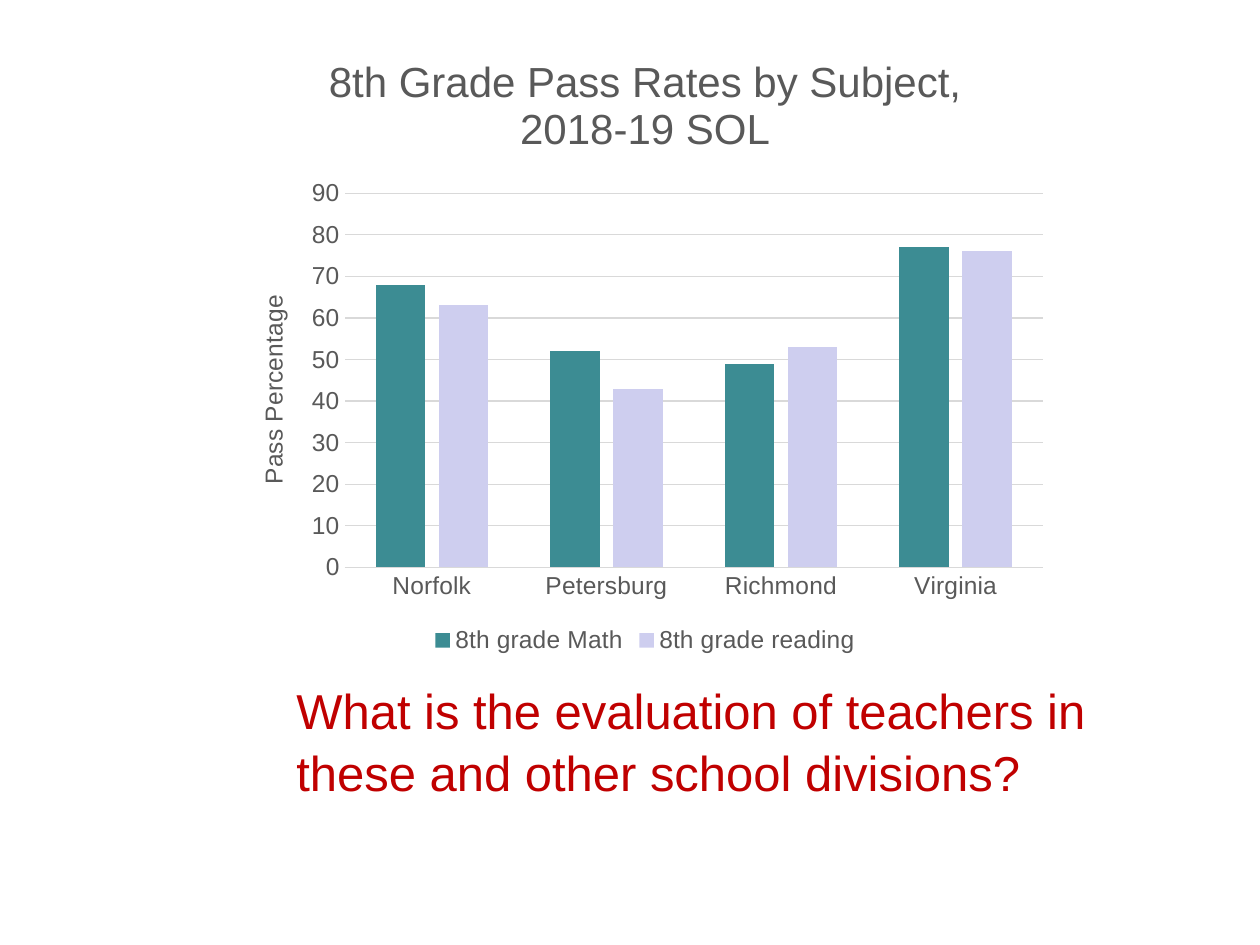
from dataclasses import dataclass

from pptx import Presentation
from pptx.chart.data import CategoryChartData as Data
from pptx.dml.color import RGBColor as Rgb
from pptx.enum.chart import XL_CHART_TYPE as Kind, XL_LEGEND_POSITION as Spot, XL_TICK_MARK as Tick
from pptx.enum.text import MSO_ANCHOR as Anchor, MSO_AUTO_SIZE as Fit, PP_ALIGN as Align
from pptx.util import Cm, Pt


@dataclass(frozen=True)
class Theme:
    face: str = "Arial"
    ink: str = "595959"
    rule: str = "D9D9D9"
    alert: str = "C00000"
    bars: tuple = ("3C8C93", "CECEEF")
    label: int = 14
    head: int = 24
    ask: int = 28


class Deck:
    """Hold the theme and the current slide, and add styled elements to it."""

    def __init__(self, theme):
        self.theme = theme
        self.show = Presentation()
        self.show.slide_width, self.show.slide_height = Cm(25.4), Cm(19.05)
        self.slide = self.show.slides.add_slide(self.show.slide_layouts[5])

    def style(self, font, size, tint):
        font.name, font.size, font.bold = self.theme.face, Pt(size), False
        font.color.rgb = Rgb.from_string(tint)

    def put(self, frame, text, size, tint):
        para = frame.paragraphs[0]
        run = para.add_run()
        run.text = text
        self.style(run.font, size, tint)
        return para

    def title(self, text, box):
        shape = self.slide.shapes.title
        shape.left, shape.top, shape.width, shape.height = map(Cm, box)
        frame = shape.text_frame
        frame.word_wrap, frame.auto_size = True, Fit.SHAPE_TO_FIT_TEXT
        frame.vertical_anchor = Anchor.TOP
        para = self.put(frame, text, self.theme.ask, self.theme.alert)
        para.alignment, para.line_spacing = Align.LEFT, 1.05

    def rule(self, line):
        line.color.rgb = Rgb.from_string(self.theme.rule)
        line.width = Pt(0.75)

    def chart(self, title, unit, cats, rows, box):
        look = self.theme
        data = Data()
        data.categories = cats
        for name, vals in rows.items():
            data.add_series(name, vals)
        chart = self.slide.shapes.add_chart(Kind.COLUMN_CLUSTERED, *map(Cm, box), data).chart
        self.style(chart.font, look.label, look.ink)
        chart.has_title = True
        self.put(chart.chart_title.text_frame, title, look.head, look.ink)
        chart.chart_title.include_in_layout = False
        chart.has_legend = True
        chart.legend.position = Spot.BOTTOM
        chart.legend.include_in_layout = False
        self.style(chart.legend.font, look.label, look.ink)

        base, side = chart.category_axis, chart.value_axis
        for axis in (base, side):
            axis.major_tick_mark = axis.minor_tick_mark = Tick.NONE
            self.style(axis.tick_labels.font, look.label, look.ink)
        self.rule(base.format.line)
        side.format.line.fill.background()
        self.rule(side.major_gridlines.format.line)
        side.minimum_scale, side.maximum_scale, side.major_unit = 0, 90, 10
        side.has_title = True
        self.put(side.axis_title.text_frame, unit, look.label, look.ink)

        plot = chart.plots[0]
        plot.gap_width, plot.overlap, plot.vary_by_categories = 125, -27, False
        for row, tint in zip(plot.series, look.bars):
            row.format.fill.solid()
            row.format.fill.fore_color.rgb = Rgb.from_string(tint)
            row.invert_if_negative = False


deck = Deck(Theme())
deck.chart(
    "8th Grade Pass Rates by Subject, 2018-19 SOL",
    "Pass Percentage",
    ("Norfolk", "Petersburg", "Richmond", "Virginia"),
    {"8th grade Math": (68, 52, 49, 77), "8th grade reading": (63, 43, 53, 76)},
    (4.65, 0.56, 16.71, 12.73),
)
deck.title(
    "What is the evaluation of teachers in these and other school divisions?",
    (5.72, 13.54, 16.71, 2.64),
)
deck.show.save("out.pptx")
